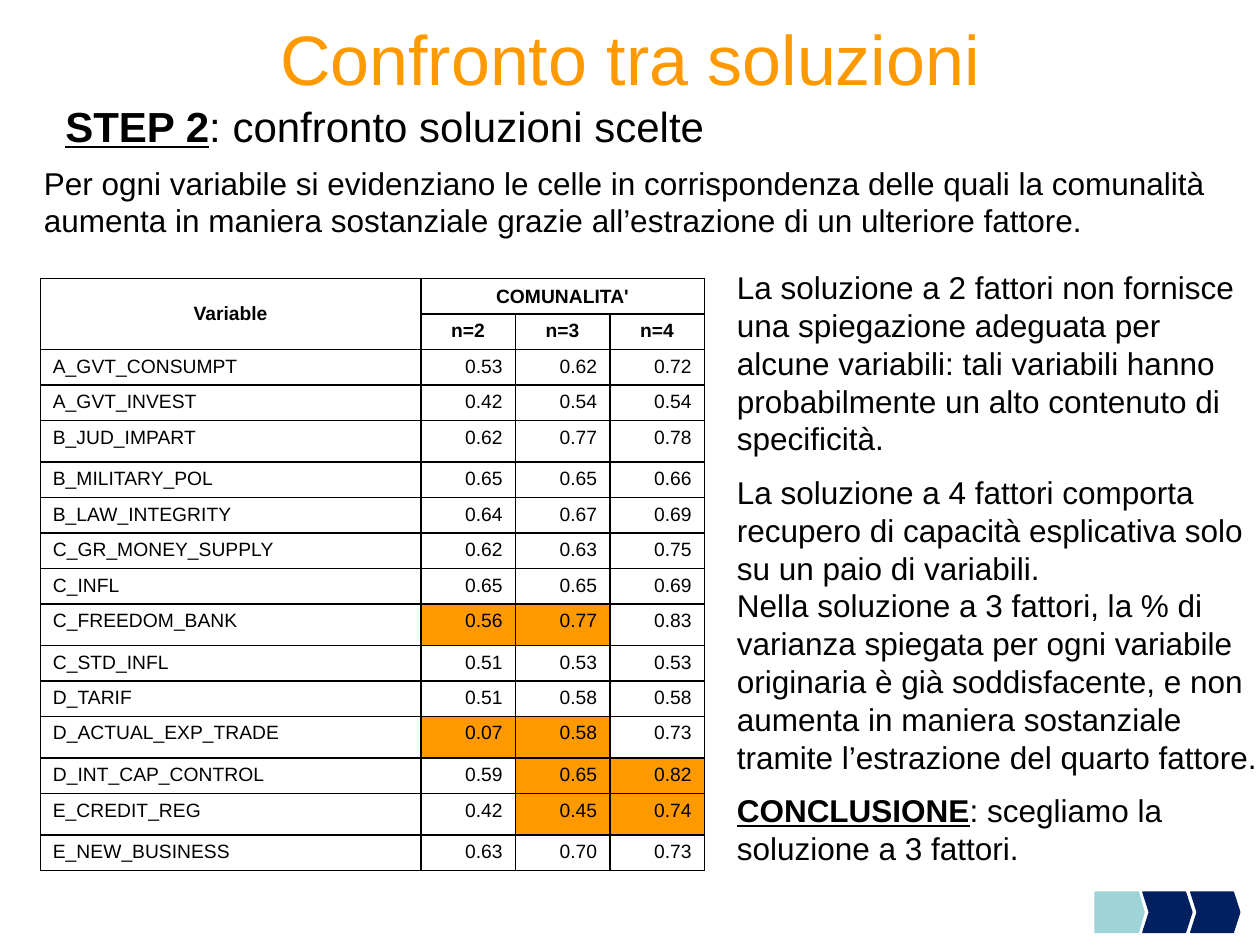
from lxml import etree
from pptx import Presentation
from pptx.dml.color import RGBColor
from pptx.enum.shapes import MSO_SHAPE as Shape
from pptx.enum.text import MSO_ANCHOR as Anchor, PP_ALIGN as Align
from pptx.oxml.ns import qn
from pptx.util import Inches, Pt

FONT = "Arial"
BLACK, ORANGE, NAVY, TEAL = "000000", "FF9900", "002060", "9ED3D7"

TITLE = "Confronto tra soluzioni"
# Paragraphs: (underlined lead, remaining text)
STEP = [("STEP 2", ": confronto soluzioni scelte")]
INTRO = [("", "Per ogni variabile si evidenziano le celle in corrispondenza delle quali "
              "la comunalità aumenta in maniera sostanziale grazie all’estrazione di un "
              "ulteriore fattore.")]
COMMENTS = [
    ("", "La soluzione a 2 fattori non fornisce una spiegazione adeguata per alcune "
         "variabili: tali variabili hanno probabilmente un alto contenuto di specificità."),
    ("", "La soluzione a 4 fattori comporta recupero di capacità esplicativa solo su un "
         "paio di variabili.\vNella soluzione a 3 fattori, la % di varianza spiegata per "
         "ogni variabile originaria è già soddisfacente, e non aumenta in maniera "
         "sostanziale tramite l’estrazione del quarto fattore."),
    ("CONCLUSIONE", ": scegliamo la soluzione a 3 fattori."),
]

HEADERS = [["Variable", "COMUNALITA'", "", ""], ["", "n=2", "n=3", "n=4"]]
COMMUNALITIES = [
    ["A_GVT_CONSUMPT", "0.53", "0.62", "0.72"],
    ["A_GVT_INVEST", "0.42", "0.54", "0.54"],
    ["B_JUD_IMPART", "0.62", "0.77", "0.78"],
    ["B_MILITARY_POL", "0.65", "0.65", "0.66"],
    ["B_LAW_INTEGRITY", "0.64", "0.67", "0.69"],
    ["C_GR_MONEY_SUPPLY", "0.62", "0.63", "0.75"],
    ["C_INFL", "0.65", "0.65", "0.69"],
    ["C_FREEDOM_BANK", "0.56", "0.77", "0.83"],
    ["C_STD_INFL", "0.51", "0.53", "0.53"],
    ["D_TARIF", "0.51", "0.58", "0.58"],
    ["D_ACTUAL_EXP_TRADE", "0.07", "0.58", "0.73"],
    ["D_INT_CAP_CONTROL", "0.59", "0.65", "0.82"],
    ["E_CREDIT_REG", "0.42", "0.45", "0.74"],
    ["E_NEW_BUSINESS", "0.63", "0.70", "0.73"],
]
HIGHLIGHTS = {  # variable: highlighted columns
    "C_FREEDOM_BANK": (1, 2),
    "D_ACTUAL_EXP_TRADE": (1, 2),
    "D_INT_CAP_CONTROL": (2, 3),
    "E_CREDIT_REG": (2, 3),
}
TALL_ROWS = {"B_JUD_IMPART", "C_FREEDOM_BANK", "D_ACTUAL_EXP_TRADE", "E_CREDIT_REG"}
TABLE_HEIGHT, TALL_HEIGHT = 4.7, 0.33
COLUMN_WIDTHS = [3.02, 0.75, 0.75, 0.75]

ARROWS = [  # column, shape, point depth, colour
    (2, Shape.CHEVRON, 0.16, NAVY),
    (0, Shape.PENTAGON, 0.14, TEAL),
    (1, Shape.CHEVRON, 0.16, NAVY),
]
ARROW_LEFT, ARROW_PITCH = 8.69, 0.38


def color(value):
    return RGBColor.from_string(value)


def style(span, size, tint=BLACK, bold=False, underline=False):
    font = span.font
    font.name, font.size, font.bold, font.underline = FONT, Pt(size), bold, underline
    font.color.rgb = color(tint)


def add_text(page, area, paragraphs, size, tint=BLACK, align=Align.LEFT, anchor=Anchor.TOP):
    frame = page.shapes.add_textbox(*map(Inches, area)).text_frame
    frame.word_wrap = True
    frame.vertical_anchor = anchor
    for index, (lead, rest) in enumerate(paragraphs):
        para = frame.add_paragraph() if index else frame.paragraphs[0]
        para.alignment = align
        if index:
            para.space_before = Pt(size / 2)
        para.text = rest
        for span in para.runs:
            style(span, size, tint)
        if lead:
            span = para.add_run()
            span.text = lead
            style(span, size, tint, bold=True, underline=True)
            para.runs[0]._r.addprevious(span._r)


def add_borders(cell):
    properties = cell._tc.get_or_add_tcPr()
    for position, side in enumerate(("lnL", "lnR", "lnT", "lnB")):
        line = etree.Element(qn(f"a:{side}"), w=str(Pt(1)))
        fill = etree.SubElement(line, qn("a:solidFill"))
        etree.SubElement(fill, qn("a:srgbClr"), val=BLACK)
        properties.insert(position, line)


def fill_cell(cell, text, header, column, highlighted):
    if highlighted:
        cell.fill.solid()
        cell.fill.fore_color.rgb = color(ORANGE)
    else:
        cell.fill.background()
    add_borders(cell)
    para = cell.text_frame.paragraphs[0]
    para.text = text
    para.alignment = Align.CENTER if header else Align.RIGHT if column else Align.LEFT
    for span in para.runs:
        style(span, 11, bold=header)
    para.font.size = Pt(11)


def add_communality_table(page):
    rows = HEADERS + COMMUNALITIES
    normal_height = (TABLE_HEIGHT - len(TALL_ROWS) * TALL_HEIGHT) / (len(rows) - len(TALL_ROWS))
    table = page.shapes.add_table(
        len(rows), len(COLUMN_WIDTHS), Inches(0.32), Inches(2.21),
        Inches(sum(COLUMN_WIDTHS)), Inches(TABLE_HEIGHT)).table
    table.first_row = table.horz_banding = False
    for column, width in zip(table.columns, COLUMN_WIDTHS):
        column.width = Inches(width)
    for r, values in enumerate(rows):
        name = values[0]
        table.rows[r].height = Inches(TALL_HEIGHT if name in TALL_ROWS else normal_height)
        for c, text in enumerate(values):
            fill_cell(table.cell(r, c), text, r < len(HEADERS), c, c in HIGHLIGHTS.get(name, ()))
    table.cell(0, 0).merge(table.cell(1, 0))
    table.cell(0, 1).merge(table.cell(0, 3))
    table.cell(0, 0).vertical_anchor = Anchor.MIDDLE
    table.cell(0, 1).vertical_anchor = Anchor.BOTTOM


def add_arrows(page):
    for column, kind, depth, tint in ARROWS:
        left = ARROW_LEFT + column * ARROW_PITCH
        arrow = page.shapes.add_shape(kind, *map(Inches, (left, 7.08, 0.39, 0.32)))
        arrow.adjustments[0] = depth
        arrow.shadow.inherit = False
        arrow.fill.solid()
        arrow.fill.fore_color.rgb = arrow.line.color.rgb = color(tint)
        arrow.line.width = Pt(0.75)


def main():
    deck = Presentation()
    deck.slide_width, deck.slide_height = Inches(10), Inches(7.5)
    page = deck.slides.add_slide(deck.slide_layouts[6])
    add_communality_table(page)
    add_text(page, (0.42, 0.75, 6.5, 0.5), STEP, 24)
    add_text(page, (0.25, 1.25, 9.75, 1.16), INTRO, 18)
    add_text(page, (5.75, 2.08, 4.33, 5.4), COMMENTS, 18)
    add_arrows(page)
    add_text(page, (0.5, -0.17, 9, 1.25), [("", TITLE)], 40, ORANGE, Align.CENTER, Anchor.MIDDLE)
    deck.save("out.pptx")


if __name__ == "__main__":
    main()
